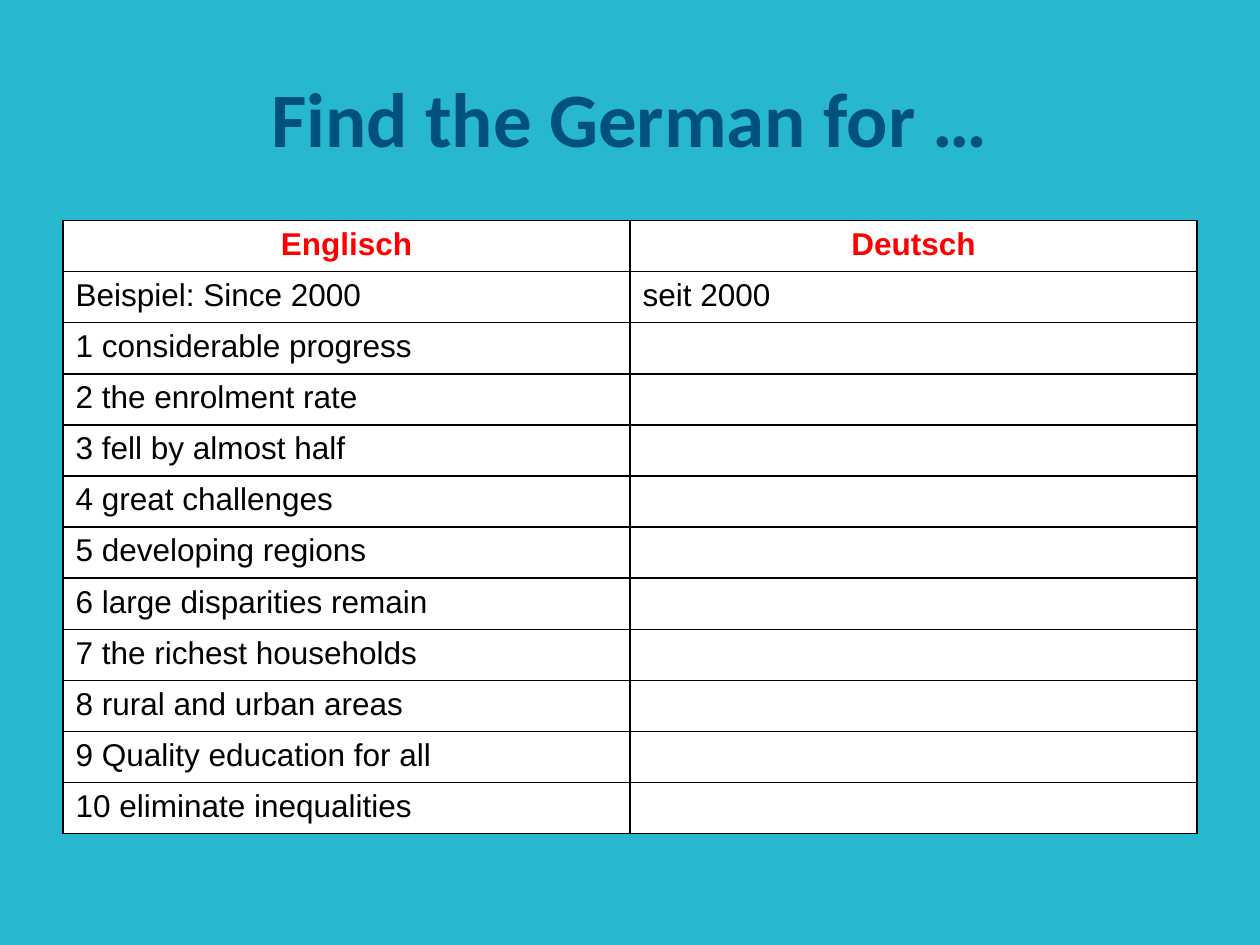
from dataclasses import dataclass

from lxml import etree
from pptx import Presentation
from pptx import util as u
from pptx.dml.color import RGBColor
from pptx.enum import text
from pptx.oxml import ns


@dataclass(frozen=True)
class Theme:
    background: str = "27B8CF"
    title: str = "00527D"
    heading: str = "FF0000"
    body: str = "000000"
    cell: str = "FFFFFF"
    border: str = "000000"
    title_font: str = "Calibri"
    table_font: str = "Arial"
    title_size: int = 44
    table_size: int = 18
    border_width: int = 1


theme = Theme()

ROWS = [
    ("Englisch", "Deutsch"),
    ("Beispiel: Since 2000", "seit 2000"),
    ("1 considerable progress", ""),
    ("2 the enrolment rate", ""),
    ("3 fell by almost half", ""),
    ("4 great challenges", ""),
    ("5 developing regions", ""),
    ("6 large disparities remain", ""),
    ("7 the richest households", ""),
    ("8 rural and urban areas", ""),
    ("9 Quality education for all", ""),
    ("10 eliminate inequalities", ""),
]


def style_paragraph(paragraph, name, size, color, bold, centered):
    paragraph.font.name = name
    paragraph.font.size = u.Pt(size)
    paragraph.font.bold = bold
    paragraph.font.color.rgb = RGBColor.from_string(color)
    paragraph.alignment = text.PP_ALIGN.CENTER if centered else text.PP_ALIGN.LEFT


def add_borders(cell):
    """Line all four sides; call before filling, since lines precede the fill in the XML."""
    properties = cell._tc.get_or_add_tcPr()
    for side in ("a:lnL", "a:lnR", "a:lnT", "a:lnB"):
        line = etree.SubElement(properties, ns.qn(side), w=str(u.Pt(theme.border_width)))
        fill = etree.SubElement(line, ns.qn("a:solidFill"))
        etree.SubElement(fill, ns.qn("a:srgbClr"), val=theme.border)


presentation = Presentation()
presentation.slide_width = u.Inches(10)
presentation.slide_height = u.Inches(7.5)
slide = presentation.slides.add_slide(presentation.slide_layouts.get_by_name("Title Only"))
slide.background.fill.solid()
slide.background.fill.fore_color.rgb = RGBColor.from_string(theme.background)

title = slide.shapes.title
title.left, title.top = u.Inches(0.5), u.Inches(0.3)
title.width, title.height = u.Inches(9), u.Inches(1.25)
title.text_frame.text = "Find the German for …"
title.text_frame.vertical_anchor = text.MSO_ANCHOR.MIDDLE
style_paragraph(title.text_frame.paragraphs[0], theme.title_font, theme.title_size,
                theme.title, True, True)

table = slide.shapes.add_table(len(ROWS), 2, u.Inches(0.5), u.Inches(1.75),
                               u.Inches(9), u.Inches(4.87)).table
table.first_row = False
table.horz_banding = False

for row_index, row in enumerate(ROWS):
    is_heading = row_index == 0
    color = theme.heading if is_heading else theme.body
    for column_index, wording in enumerate(row):
        cell = table.cell(row_index, column_index)
        add_borders(cell)
        cell.fill.solid()
        cell.fill.fore_color.rgb = RGBColor.from_string(theme.cell)
        cell.text = wording
        style_paragraph(cell.text_frame.paragraphs[0], theme.table_font, theme.table_size,
                        color, is_heading, is_heading)

presentation.save("out.pptx")
